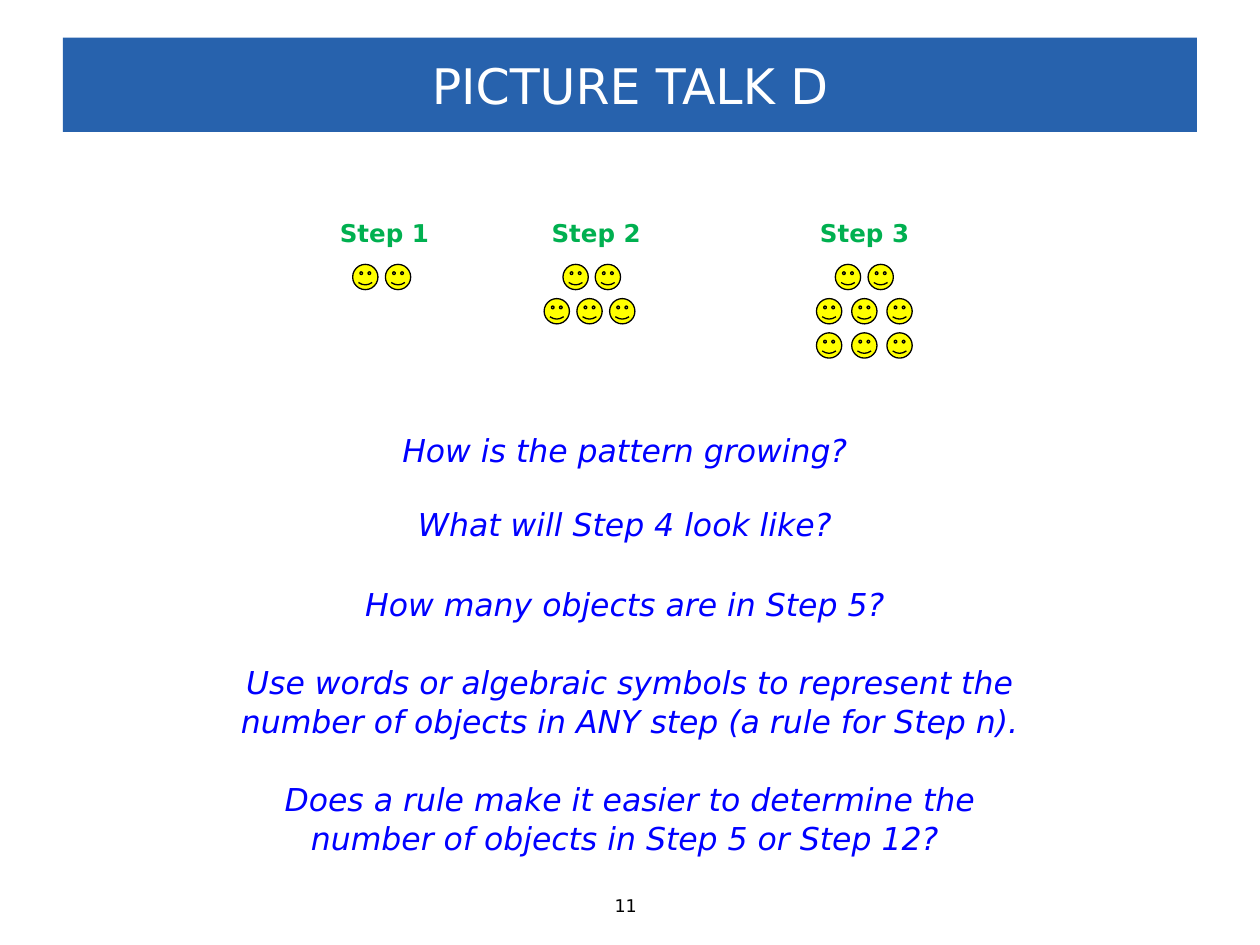
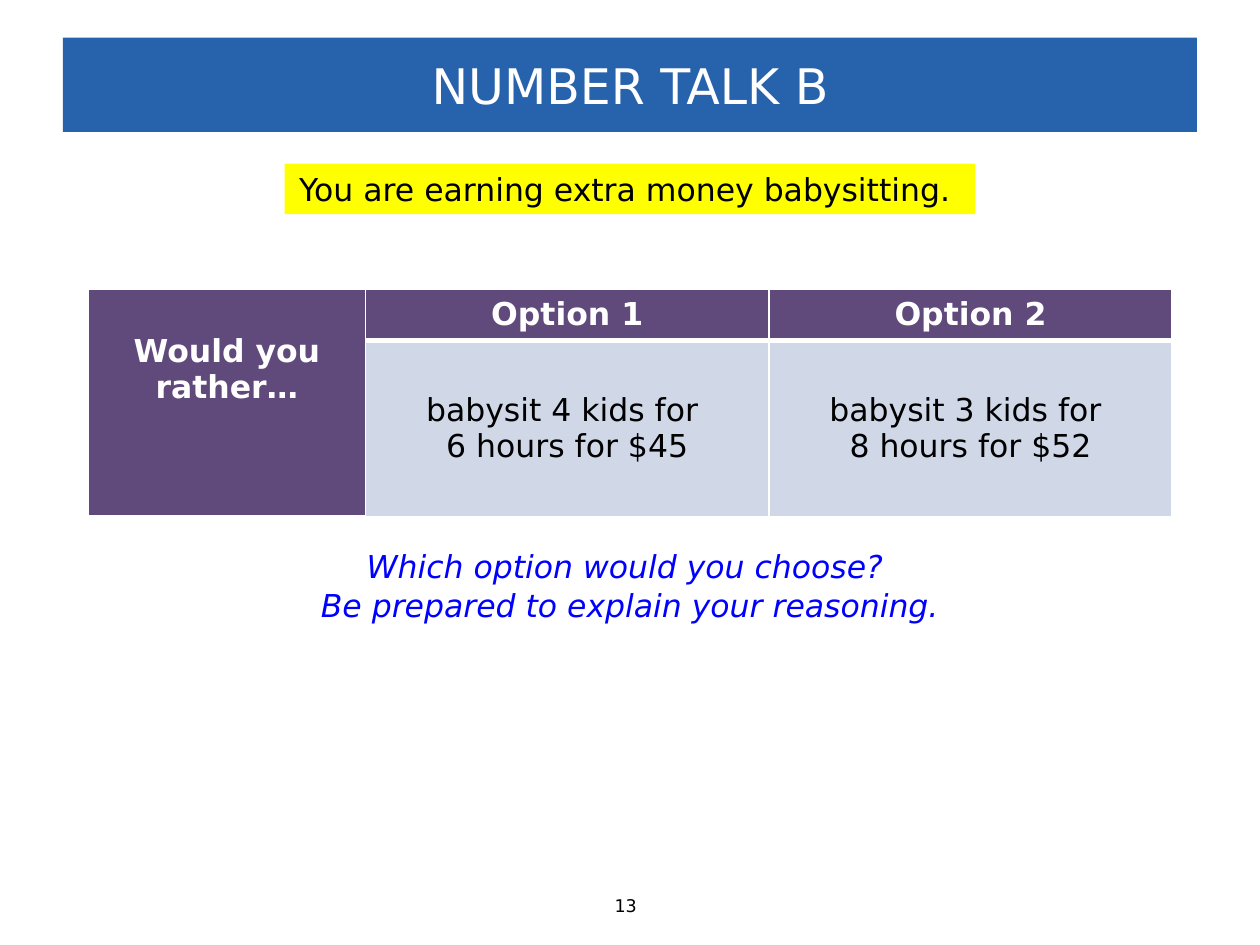
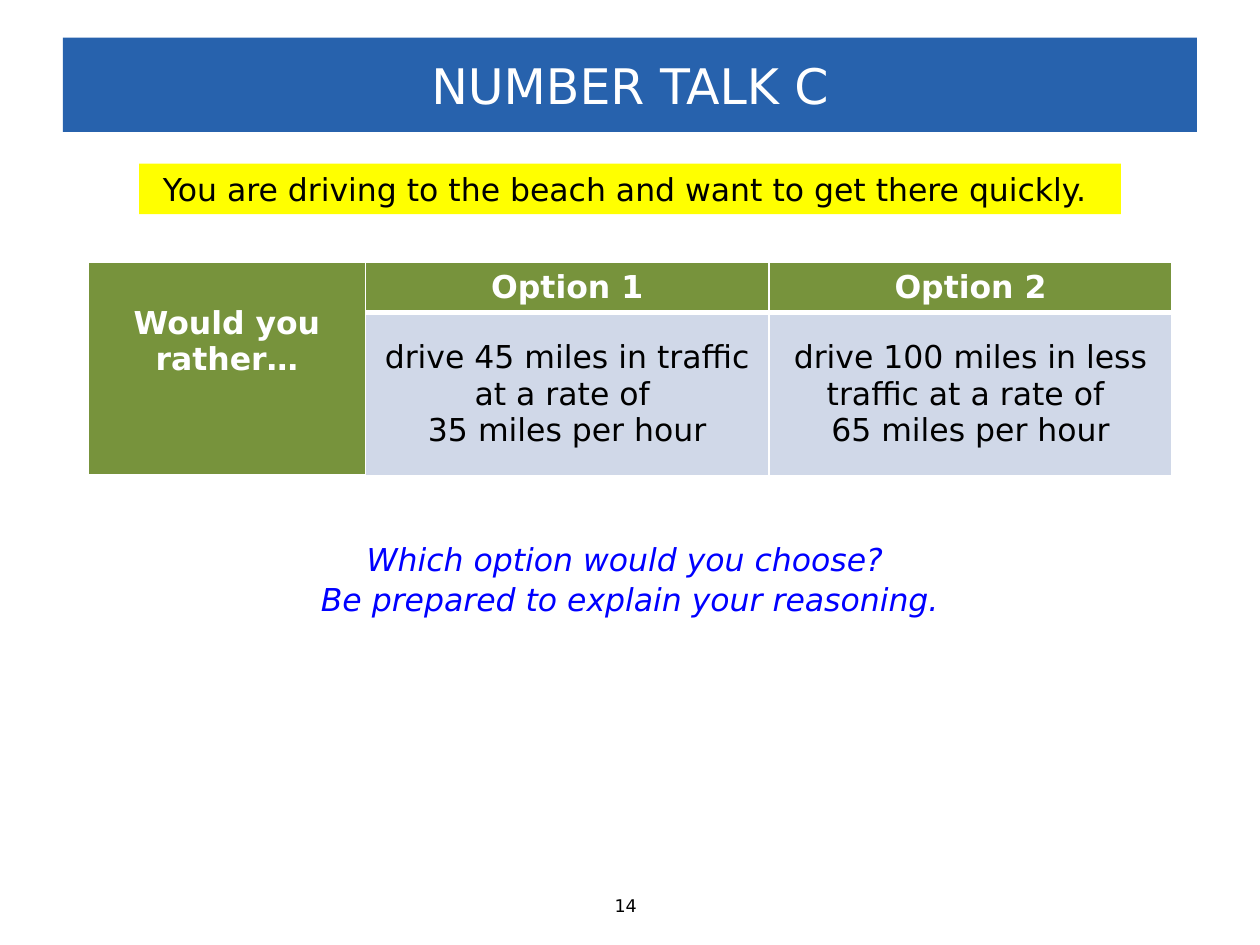
from dataclasses import dataclass

from lxml import etree
from pptx import Presentation
from pptx.dml.color import RGBColor
from pptx.enum import shapes, text
from pptx.oxml import ns
from pptx.util import Cm, Pt


@dataclass(frozen=True)
class Theme:
    font: str = "DejaVu Sans"
    band: str = "2762AD"
    white: str = "FFFFFF"
    black: str = "000000"
    question: str = "0000FF"
    step: str = "00B050"
    highlight: str = "FFFF00"
    option: str = "D0D8E8"
    purple: str = "604A7B"
    green: str = "77933C"
    title_size: int = 28
    body_size: int = 18
    step_size: int = 14
    number_size: int = 10


THEME = Theme()
SLIDE_WIDTH, SLIDE_HEIGHT = 25.4, 19.05
FACE_SIZE, FACE_TOP, FACE_ROW_PITCH = 0.51, 5.33, 0.69
CENTER = text.PP_ALIGN.CENTER


# Basic elements
def paint(fill, color):
    fill.solid()
    fill.fore_color.rgb = RGBColor.from_string(color)


def write(frame, lines, size, color, align=CENTER, bold=False, italic=False, spacing=None):
    frame.word_wrap = True
    for index, line in enumerate(lines):
        paragraph = frame.paragraphs[0] if index == 0 else frame.add_paragraph()
        paragraph.text = line
        paragraph.alignment = align
        paragraph.line_spacing = spacing
        font = paragraph.font
        font.name, font.size = THEME.font, Pt(size)
        font.bold, font.italic = bold, italic
        font.color.rgb = RGBColor.from_string(color)


def add_text(slide, left, top, width, height, lines, size, color, **style):
    box = slide.shapes.add_textbox(Cm(left), Cm(top), Cm(width), Cm(height))
    write(box.text_frame, lines, size, color, **style)


def add_filled(slide, kind, left, top, width, height, color):
    shape = slide.shapes.add_shape(kind, Cm(left), Cm(top), Cm(width), Cm(height))
    shape.shadow.inherit = False
    paint(shape.fill, color)
    shape.line.fill.background()
    return shape


def add_band(slide, top, width, height, line, size, color, fill):
    left = (SLIDE_WIDTH - width) / 2
    band = add_filled(slide, shapes.MSO_SHAPE.RECTANGLE, left, top, width, height, fill)
    band.text_frame.vertical_anchor = text.MSO_ANCHOR.MIDDLE
    write(band.text_frame, [line], size, color)


# Slide frame: title band and page number
def add_talk(deck, title, number):
    slide = deck.slides.add_slide(deck.slide_layouts[6])
    add_band(slide, 0.76, 22.86, 1.9, title, THEME.title_size, THEME.white, THEME.band)
    add_text(slide, 12.14, 17.91, 1.12, 0.69, [number], THEME.number_size, THEME.black,
             align=text.PP_ALIGN.LEFT)
    return slide


def add_question(slide, top, width, height, *lines):
    add_text(slide, (SLIDE_WIDTH - width) / 2, top, width, height, lines,
             THEME.body_size, THEME.question, italic=True, spacing=1.04)


# Growing pattern
def add_step(slide, name, left, rows):
    """Each row of faces is (left, count, pitch)."""
    add_text(slide, left, 4.27, 2.51, 0.86, [name], THEME.step_size, THEME.step,
             align=text.PP_ALIGN.LEFT, bold=True)
    for row, (row_left, count, pitch) in enumerate(rows):
        for column in range(count):
            face = add_filled(slide, shapes.MSO_SHAPE.SMILEY_FACE, row_left + column * pitch,
                              FACE_TOP + row * FACE_ROW_PITCH, FACE_SIZE, FACE_SIZE,
                              THEME.highlight)
            paint(face.line.fill, THEME.black)
            face.line.width = Pt(0.75)


# Options table
def set_borders(cell, bottom):
    properties = cell._tc.get_or_add_tcPr()
    widths = {"a:lnL": 1, "a:lnR": 1, "a:lnT": 1, "a:lnB": bottom}
    for position, (tag, width) in enumerate(widths.items()):
        line = etree.Element(ns.qn(tag), w=str(Pt(width)))
        fill = etree.SubElement(line, ns.qn("a:solidFill"))
        etree.SubElement(fill, ns.qn("a:srgbClr"), val=THEME.white)
        properties.insert(position, line)


def add_options(slide, top, option_height, color, options):
    widths, heights = (5.59, 8.13, 8.13), (1.02, option_height)
    table = slide.shapes.add_table(2, 3, Cm(1.78), Cm(top), Cm(sum(widths)),
                                   Cm(sum(heights))).table
    for column, width in zip(table.columns, widths):
        column.width = Cm(width)
    for row, height in zip(table.rows, heights):
        row.height = Cm(height)

    prompt = table.cell(0, 0)
    prompt.merge(table.cell(1, 0))
    for row in range(2):
        for column in range(3):
            cell = table.cell(row, column)
            heading = row == 0 or column == 0
            paint(cell.fill, color if heading else THEME.option)
            set_borders(cell, bottom=3 if heading else 1)
            cell.vertical_anchor = text.MSO_ANCHOR.MIDDLE

    prompt.vertical_anchor = text.MSO_ANCHOR.TOP
    prompt.margin_top = Cm(0.87)
    write(prompt.text_frame, ["Would you rather…"], THEME.body_size, THEME.white, bold=True)
    for column, lines in enumerate(options, start=1):
        write(table.cell(0, column).text_frame, [f"Option {column}"],
              THEME.body_size, THEME.white, bold=True)
        write(table.cell(1, column).text_frame, lines, THEME.body_size, THEME.black)


def add_number_talk(deck, title, number, situation, situation_width, table_top,
                    option_height, color, options, question_top):
    slide = add_talk(deck, title, number)
    add_question(slide, question_top, 13, 1.8, "Which option would you choose? ",
                 "Be prepared to explain your reasoning.")
    add_options(slide, table_top, option_height, color, options)
    add_band(slide, 3.3, situation_width, 1.02, situation, THEME.body_size,
             THEME.black, THEME.highlight)


def add_picture_talk(deck):
    slide = add_talk(deck, "PICTURE TALK D", "11")
    add_step(slide, "Step 1", 6.6, [(7.11, 2, 0.66)])
    add_step(slide, "Step 2", 10.87, [(11.35, 2, 0.65), (10.97, 3, 0.66)])
    add_step(slide, "Step 3", 16.28, [(16.84, 2, 0.66)] + [(16.46, 3, 0.71)] * 2)
    add_question(slide, 8.53, 10.34, 1.02, "How is the pattern growing? ")
    add_question(slide, 10.03, 9.63, 1.02, "What will Step 4 look like? ")
    add_question(slide, 11.63, 11.35, 1.02, "How many objects are in Step 5? ")
    add_question(slide, 13.21, 17.02, 1.8, "Use words or algebraic symbols to represent "
                 "the number of objects in ANY step (a rule for Step n).")
    add_question(slide, 15.57, 14.81, 1.8, "Does a rule make it easier to determine the "
                 "number of objects in Step 5 or Step 12? ")


def main():
    deck = Presentation()
    deck.slide_width, deck.slide_height = Cm(SLIDE_WIDTH), Cm(SLIDE_HEIGHT)
    add_picture_talk(deck)
    add_number_talk(
        deck, "NUMBER TALK B", "13", "You are earning extra money babysitting. ", 13.92,
        table_top=5.84, option_height=3.56, color=THEME.purple,
        options=[["babysit 4 kids for ", "6 hours for $45"],
                 ["babysit 3 kids for ", "8 hours for $52"]],
        question_top=10.87)
    add_number_talk(
        deck, "NUMBER TALK C", "14",
        "You are driving to the beach and want to get there quickly. ", 19.79,
        table_top=5.28, option_height=3.3, color=THEME.green,
        options=[["drive 45 miles in traffic at a rate of ", "35 miles per hour"],
                 ["drive 100 miles in less traffic at a rate of ", "65 miles per hour"]],
        question_top=10.74)
    deck.save("out.pptx")


if __name__ == "__main__":
    main()
